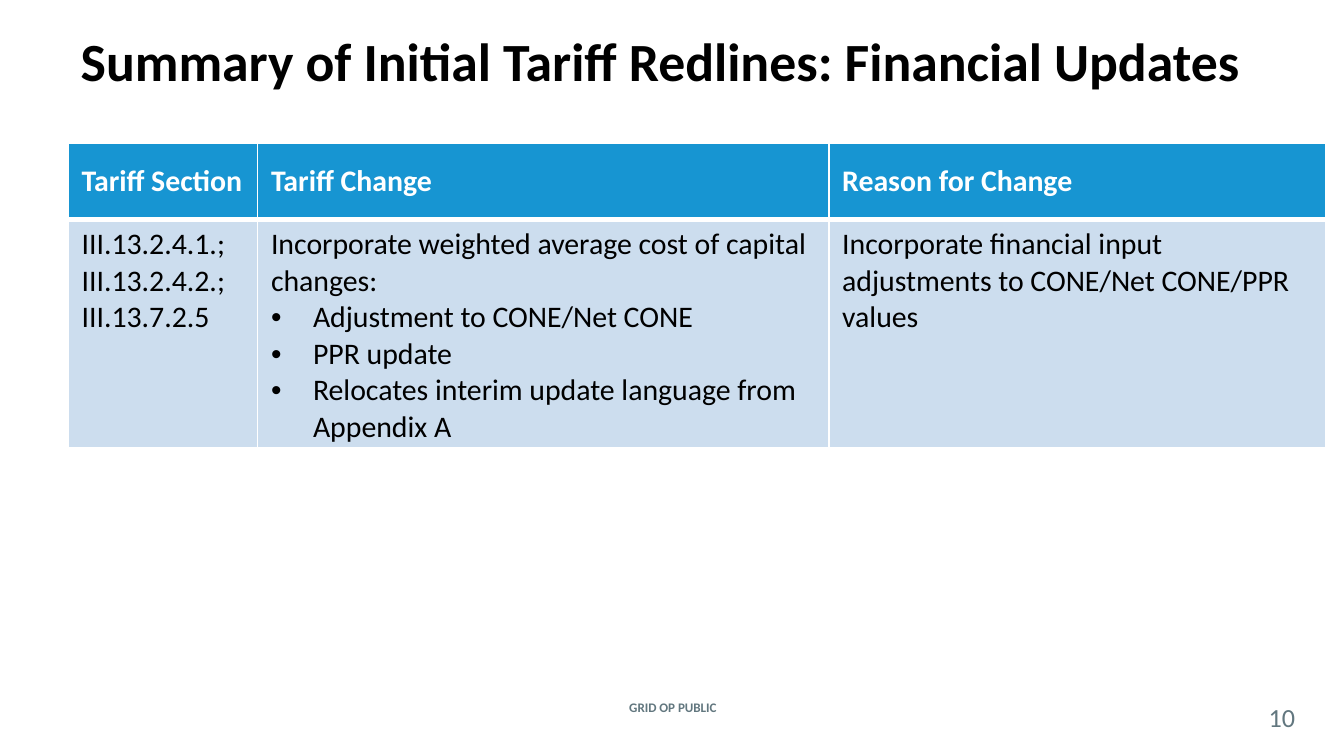
from lxml.etree import SubElement
from pptx import Presentation
from pptx.dml.color import RGBColor
from pptx.enum.text import MSO_ANCHOR, PP_ALIGN
from pptx.oxml import parse_xml
from pptx.oxml.ns import nsdecls, qn
from pptx.util import Pt

FONT = "Calibri"
BLACK, WHITE, SLATE = "000000", "FFFFFF", "62777F"
HEADER_BLUE, BODY_BLUE = "1795D2", "CCDDEE"
BULLET = "• "
BULLET_INDENT = Pt(22.5)

COLUMN_WIDTHS = (101.5, 306, 266.4)
ROW_HEIGHTS = (41, 122.4)
HEADINGS = ("Tariff Section", "Tariff Change", "Reason for Change")
CHANGES = (
    ("III.13.2.4.1.;", "III.13.2.4.2.;", "III.13.7.2.5"),
    (
        "Incorporate weighted average cost of capital changes:",
        "• Adjustment to CONE/Net CONE",
        "• PPR update",
        "• Relocates interim update language from Appendix A",
    ),
    ("Incorporate financial input adjustments to CONE/Net CONE/PPR values",),
)


def rgb(color):
    return RGBColor.from_string(color)


def format_font(paragraph, size, color, bold=False):
    values = {"name": FONT, "size": Pt(size), "bold": bold}
    for run in paragraph.runs:
        for name, value in values.items():
            setattr(run.font, name, value)
        run.font.color.rgb = rgb(color)


def add_bullet(paragraph):
    properties = paragraph._p.get_or_add_pPr()
    properties.set("marL", str(BULLET_INDENT))
    properties.set("indent", str(-BULLET_INDENT))
    SubElement(properties, qn("a:buFont"), typeface="Arial")
    SubElement(properties, qn("a:buChar"), char=BULLET.strip())


def add_title(slide, text):
    title = slide.shapes.title
    box = {"left": Pt(36), "top": Pt(-1.5), "width": Pt(648), "height": Pt(67.5)}
    for name, value in box.items():
        setattr(title, name, value)
    title.text_frame.text = text
    title.text_frame.vertical_anchor = MSO_ANCHOR.MIDDLE
    paragraph = title.text_frame.paragraphs[0]
    paragraph.alignment = PP_ALIGN.LEFT
    format_font(paragraph, 28.8, BLACK, bold=True)


def add_footer_text(slide, text, box, size, bold=False):
    frame = slide.shapes.add_textbox(*map(Pt, box)).text_frame
    values = {"word_wrap": True, "vertical_anchor": MSO_ANCHOR.MIDDLE,
              "margin_left": 0, "margin_right": 0,
              "margin_top": 0, "margin_bottom": 0}
    for name, value in values.items():
        setattr(frame, name, value)
    frame.text = text
    frame.paragraphs[0].alignment = PP_ALIGN.CENTER
    format_font(frame.paragraphs[0], size, SLATE, bold)


def set_borders(cell, **widths):
    """Draw white borders; they must come before the fill in the cell's XML."""
    properties = cell._tc.get_or_add_tcPr()
    for index, side in enumerate("LRTB"):
        width = Pt(widths.get(side, 1))
        properties.insert(index, parse_xml(
            f'<a:ln{side} {nsdecls("a")} w="{width}"><a:solidFill>'
            f'<a:srgbClr val="{WHITE}"/></a:solidFill></a:ln{side}>'))


def fill_cell(cell, lines, fill, color, bold, anchor):
    cell.fill.solid()
    cell.fill.fore_color.rgb = rgb(fill)
    cell.vertical_anchor = anchor
    frame = cell.text_frame
    for index, line in enumerate(lines):
        paragraph = frame.add_paragraph() if index else frame.paragraphs[0]
        if line.startswith(BULLET):
            add_bullet(paragraph)
        paragraph.text = line.removeprefix(BULLET)
        format_font(paragraph, 16, color, bold)


def add_tariff_table(slide):
    table = slide.shapes.add_table(
        len(ROW_HEIGHTS), len(COLUMN_WIDTHS), Pt(36.5), Pt(76.5),
        Pt(sum(COLUMN_WIDTHS)), Pt(sum(ROW_HEIGHTS))).table
    for column, width in zip(table.columns, COLUMN_WIDTHS):
        column.width = Pt(width)
    for row, height in zip(table.rows, ROW_HEIGHTS):
        row.height = Pt(height)
    for index, (heading, change) in enumerate(zip(HEADINGS, CHANGES)):
        header, body = table.cell(0, index), table.cell(1, index)
        fill_cell(header, [heading], HEADER_BLUE, WHITE, True, MSO_ANCHOR.MIDDLE)
        set_borders(header, B=3)
        fill_cell(body, change, BODY_BLUE, BLACK, False, MSO_ANCHOR.TOP)
        set_borders(body, T=3)


def main():
    deck = Presentation()
    deck.slide_width, deck.slide_height = Pt(720), Pt(405)
    slide = deck.slides.add_slide(deck.slide_layouts[5])
    add_footer_text(slide, "GRID OP PUBLIC", (307.5, 371.5, 106, 15), 7, bold=True)
    add_title(slide, "Summary of Initial Tariff Redlines: Financial Updates")
    add_footer_text(slide, "10", (671.75, 376, 30, 16), 14)
    add_tariff_table(slide)
    deck.save("out.pptx")


if __name__ == "__main__":
    main()
